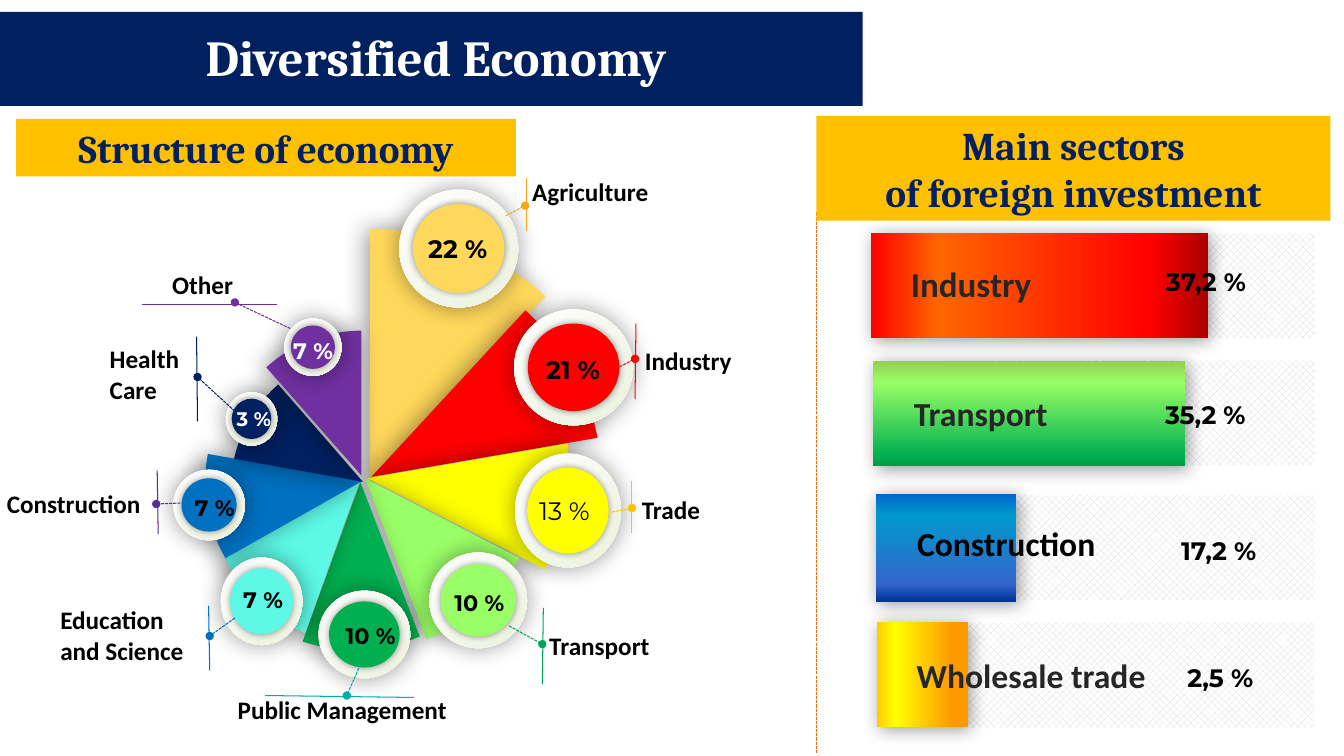
from lxml import etree
from pptx import Presentation
from pptx.dml.color import RGBColor
from pptx.enum.dml import MSO_LINE, MSO_PATTERN
from pptx.enum.shapes import MSO_CONNECTOR, MSO_SHAPE
from pptx.enum.text import MSO_AUTO_SIZE, PP_ALIGN
from pptx.oxml.ns import qn
from pptx.util import Pt

COLORS = {
    "black": "000000", "white": "FFFFFF", "navy": "002060", "gold": "FFC000",
    "sand": "FFD85B", "red": "FF0000", "yellow": "FFFF00", "lime": "99FF66",
    "green": "00B050", "aqua": "5DF9E6", "blue": "0070C0", "purple": "7030A0",
    "amber": "F8A51B", "emerald": "03A35E", "teal": "02ACAC", "violet": "582E92",
    "rust": "E46C0A", "ivory": "EBF1DE", "gray": "D9D9D9", "charcoal": "262626",
    "orange": "FF6600", "maroon": "A80000", "grass": "92D050", "forest": "009A46",
    "azure": "0066CC", "cerulean": "0099CC", "royal": "3366CC", "ultramarine": "003399",
    "corn": "FFCC00", "tangerine": "FF9900",
}
RING = [(0, "white"), (97, "ivory")]

deck = Presentation()
deck.slide_width, deck.slide_height = Pt(960), Pt(540)
slide = deck.slides.add_slide(deck.slide_layouts[6])
shapes = slide.shapes


def add_block(kind, box, paint, angle=0, shadow=None):
    block = shapes.add_shape(kind, *[Pt(v) for v in box])
    block.line.fill.background()
    block.shadow.inherit = False
    props = block._element.spPr
    if isinstance(paint, str):
        block.fill.solid()
        block.fill.fore_color.rgb = RGBColor.from_string(COLORS[paint])
    else:
        block.fill.gradient()
        block.fill.gradient_angle = (360 - angle) % 360
        stops = props.find(".//" + qn("a:gsLst"))
        for old in list(stops):
            stops.remove(old)
        for place, color in paint:
            stop = etree.SubElement(stops, qn("a:gs"), pos=str(place * 1000))
            etree.SubElement(stop, qn("a:srgbClr"), val=COLORS[color])
    if shadow:
        blur, distance, direction = shadow
        outer = etree.SubElement(props.find(qn("a:effectLst")), qn("a:outerShdw"),
                                 blurRad=str(Pt(blur)), dist=str(Pt(distance)),
                                 dir=str(direction * 60000))
        tint = etree.SubElement(outer, qn("a:srgbClr"), val=COLORS["black"])
        etree.SubElement(tint, qn("a:alpha"), val="40000")
    return block


def write(holder, text, size, font, color, bold=True, align=PP_ALIGN.LEFT, wrap=True, after=0):
    frame = holder.text_frame
    frame.text = text
    frame.word_wrap = wrap
    frame.auto_size = MSO_AUTO_SIZE.SHAPE_TO_FIT_TEXT
    for paragraph in frame.paragraphs:
        paragraph.alignment = align
        if after:
            paragraph.space_after = Pt(after)
        for run in paragraph.runs:
            run.font.size, run.font.name, run.font.bold = Pt(size), font, bold
            run.font.color.rgb = RGBColor.from_string(COLORS[color])


sectors = [
    ("sand", (79.9, 162.7, 368.6, 370.8), 59.8, 210.28, 252.78,
     (285.1, 135.4, 85, 84.2), "22 %", (298.8, 163.4, 63.4), 18, "black"),
    ("red", (103.7, 175.7, 323.3, 329.8), 115, 197.74, 235.2,
     (367.2, 221, 85, 82.8), "21 %", (383, 249.8, 63.4), 18, "black"),
    ("yellow", (110.2, 199.4, 304.6, 284.4), 113.5, 236.66, 273.73,
     (367.9, 324, 75.6, 81.4), "13 %", (378, 350.6, 57.6), 18, "black"),
    ("lime", (136.1, 218.9, 249.1, 245.5), 172.8, 214.53, 256.27,
     (306.7, 394.6, 69.8, 68.4), "10 %", (317.5, 417.6, 57.6), 16, "black"),
    ("green", (139.7, 221.8, 235.4, 244.8), 228.5, 200.47, 241.37,
     (227.5, 421.9, 65.5, 62.6), "10 %", (239.8, 440.6, 57.6), 16, "black"),
    ("aqua", (148.3, 224.6, 218.2, 234.7), 188.4, 281.29, 322.52,
     (157.7, 398.2, 58.3, 62.6), "7 %", (166.6, 415.4, 48), 16, "black"),
    ("blue", (148.3, 231.8, 220.3, 223.9), 256.7, 253.89, 293.36,
     (123.8, 335.5, 51.1, 50.4), "7 %", (132, 349.2, 48), 16, "black"),
    ("navy", (162.7, 252, 193, 184.3), 314.3, 235.78, 274.69,
     (161.3, 280.1, 36.7, 38.2), "3 %", (162, 287.3, 40), 14, "white"),
    ("purple", (156.2, 236.2, 203.8, 206.6), 0, 228.66, 270,
     (203, 227.5, 41, 41), "7 %", (202.3, 237.6, 48), 16, "white"),
]
for color, pie, turn, start, end, ring, share, (x, y, width), size, ink in sectors:
    wedge = add_block(MSO_SHAPE.PIE, pie, color, shadow=(18, 3, 180))
    wedge.rotation = turn
    wedge.adjustments[0], wedge.adjustments[1] = start * 0.6, end * 0.6
    add_block(MSO_SHAPE.OVAL, ring, RING, 50, (17, 0, 0))
    left, top, ring_w, ring_h = ring
    disc_w, disc_h = ring_w * 0.77, ring_h * 0.755
    disc = (left + (ring_w - disc_w) / 2, top + (ring_h - disc_h) / 2, disc_w, disc_h)
    add_block(MSO_SHAPE.OVAL, disc, color, shadow=(5, 0, 0))
    write(shapes.add_textbox(Pt(x), Pt(y), Pt(width), Pt(size * 1.6)), share, size,
          "Montserrat", ink, bold=share != "13 %", wrap=False, after=6)

labels = [
    ("Agriculture", (373, 122.4, 125.3, 28.8), "amber",
     (361.4, 154.1, 375.1, 146.9), (375.8, 127.4, 375.8, 164.9)),
    ("Industry", (453.6, 243.4, 149.8, 28.8), "red",
     (439.9, 263.5, 453.6, 256.3), (454.3, 231.1, 453.6, 285.1)),
    ("Trade", (451.4, 349.2, 97.9, 28.8), "gold",
     (437, 365.8, 451.4, 362.9), (451.4, 343.4, 451.4, 380.9)),
    ("Transport", (385.2, 446.4, 113.8, 28.8), "emerald",
     (363.6, 447.1, 387.4, 460.1), (388.1, 434.2, 387.4, 488.9)),
    ("Public Management", (162.7, 492.5, 175.7, 28.8), "teal",
     (256.3, 477.4, 247.7, 496.8), (295.9, 498.2, 189.4, 496.8)),
    ("Education\nand Science", (36, 428.4, 160.6, 51.1), "blue",
     (167.8, 441.4, 149.8, 454.3), (149, 432.7, 149.8, 478.8)),
    ("Construction", (-2.2, 345.6, 122.4, 28.8), "violet",
     (128.9, 359.3, 111.6, 360), (112.3, 336.2, 113, 381.6)),
    ("Health Care", (71.3, 241.9, 74.9, 51.1), "navy",
     (167.8, 293.8, 141.1, 269.3), (140.4, 240.5, 141.1, 301)),
    ("Other", (115.9, 188.6, 67, 28.8), "purple",
     (207.4, 234.7, 167.8, 216), (198, 217.4, 101.5, 217.4)),
]
strokes = [("rust", (583.2, 537.8, 583.2, 151.2), True, False)]
for name, box, color, leader, edge in labels:
    strokes += [(color, leader, True, True), (color, edge, False, False)]
    write(shapes.add_textbox(*[Pt(v) for v in box]), name, 18, "Calibri", "black")

for color, ends, dashed, dotted_end in strokes:
    stroke = shapes.add_connector(MSO_CONNECTOR.STRAIGHT, *[Pt(v) for v in ends])
    stroke.line.width = Pt(0.75)
    stroke.line.color.rgb = RGBColor.from_string(COLORS[color])
    if dashed:
        stroke.line.dash_style = MSO_LINE.SQUARE_DOT
    if dotted_end:
        etree.SubElement(stroke.line._get_or_add_ln(), qn("a:tailEnd"), type="oval")
    etree.SubElement(stroke._element.spPr, qn("a:effectLst"))

investments = [
    ("Industry", (640.8, 184.3, 105.8, 37.4), 25, "charcoal", PP_ALIGN.CENTER, False,
     "37,2 %", (825.8, 186.5, 81.4, 28.8), (771.8, 74.2, 74.9, 259.9),
     (704.9, 83.5, 74.9, 240.5), 270,
     [(0, "red"), (20, "orange"), (83, "red"), (100, "maroon")]),
    ("Transport", (627.1, 277.2, 146.9, 36), 24, "charcoal", PP_ALIGN.CENTER, True,
     "35,2 %", (825.1, 281.5, 85.7, 28.8), (771.8, 164.9, 74.9, 259.9),
     (697.7, 184.3, 74.9, 222.5), 0,
     [(0, "grass"), (20, "lime"), (90, "green"), (100, "forest")]),
    ("Construction", (648, 370.1, 187.2, 36), 24, "black", PP_ALIGN.LEFT, True,
     "17,2 %", (836.6, 378.7, 81.4, 28.8), (771.1, 260.6, 74.9, 261.4),
     (637.2, 341.3, 77, 100.1), 0,
     [(0, "azure"), (20, "cerulean"), (83, "royal"), (100, "ultramarine")]),
    ("Wholesale trade", (644.4, 464.4, 184.3, 36), 24, "charcoal", PP_ALIGN.CENTER, False,
     "2,5 %", (841, 469.4, 69.1, 28.8), (774.7, 355.7, 74.9, 253.4),
     (621.4, 449.3, 74.9, 64.8), 270,
     [(0, "corn"), (20, "yellow"), (83, "tangerine"), (100, "tangerine")]),
]
for (name, name_box, size, ink, align, wrap, share, share_box,
     track_box, bar_box, angle, paint) in investments:
    track = add_block(MSO_SHAPE.RECTANGLE, track_box, "gray")
    track.rotation = 90
    track.fill.patterned()
    track.fill.pattern = MSO_PATTERN.PERCENT_50
    track.fill.fore_color.rgb = RGBColor.from_string(COLORS["gray"])
    track.fill.back_color.rgb = RGBColor.from_string(COLORS["white"])
    add_block(MSO_SHAPE.RECTANGLE, bar_box, paint, angle, (13, 3, 45)).rotation = 90
    write(shapes.add_textbox(*[Pt(v) for v in share_box]), share, 18,
          "Montserrat", "black", wrap=False)
    write(shapes.add_textbox(*[Pt(v) for v in name_box]), name, size,
          "Calibri", ink, align=align, wrap=wrap)

headings = [
    ("Diversified Economy", (-2.2, 8.6, 618.5, 67), "navy", 36, "white"),
    ("Structure of economy", (11.5, 85, 357.1, 41), "gold", 28, "navy"),
    ("Main sectors\nof foreign investment", (583.2, 82.8, 367.2, 74.9), "gold", 28, "navy"),
]
for heading, box, color, size, ink in headings:
    banner = add_block(MSO_SHAPE.RECTANGLE, box, color)
    if size == 36:
        banner = shapes.add_textbox(Pt(15.1), Pt(15.1), Pt(592.6), Pt(51.1))
    write(banner, heading, size, "Cambria", ink, align=PP_ALIGN.CENTER)

deck.save("out.pptx")
